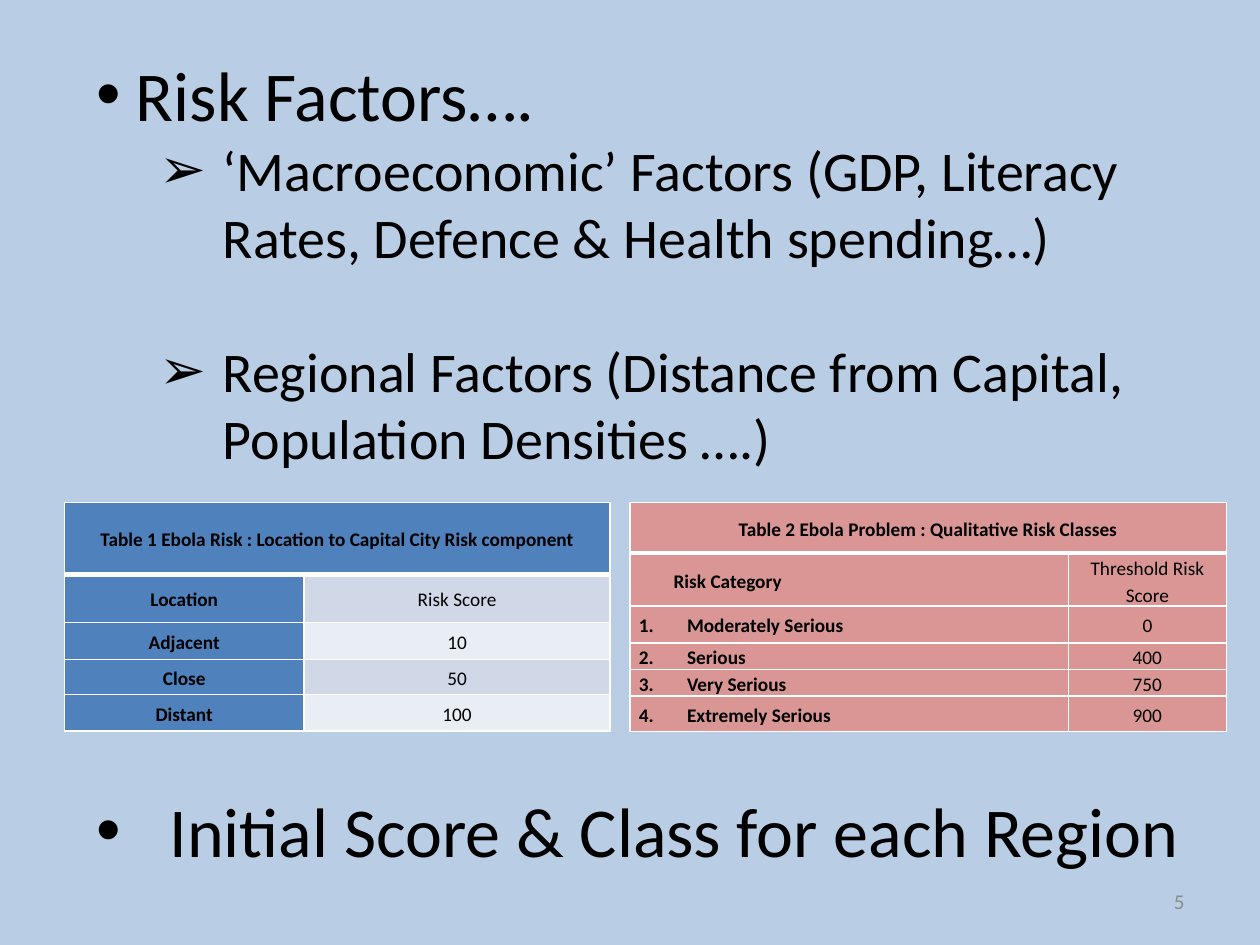
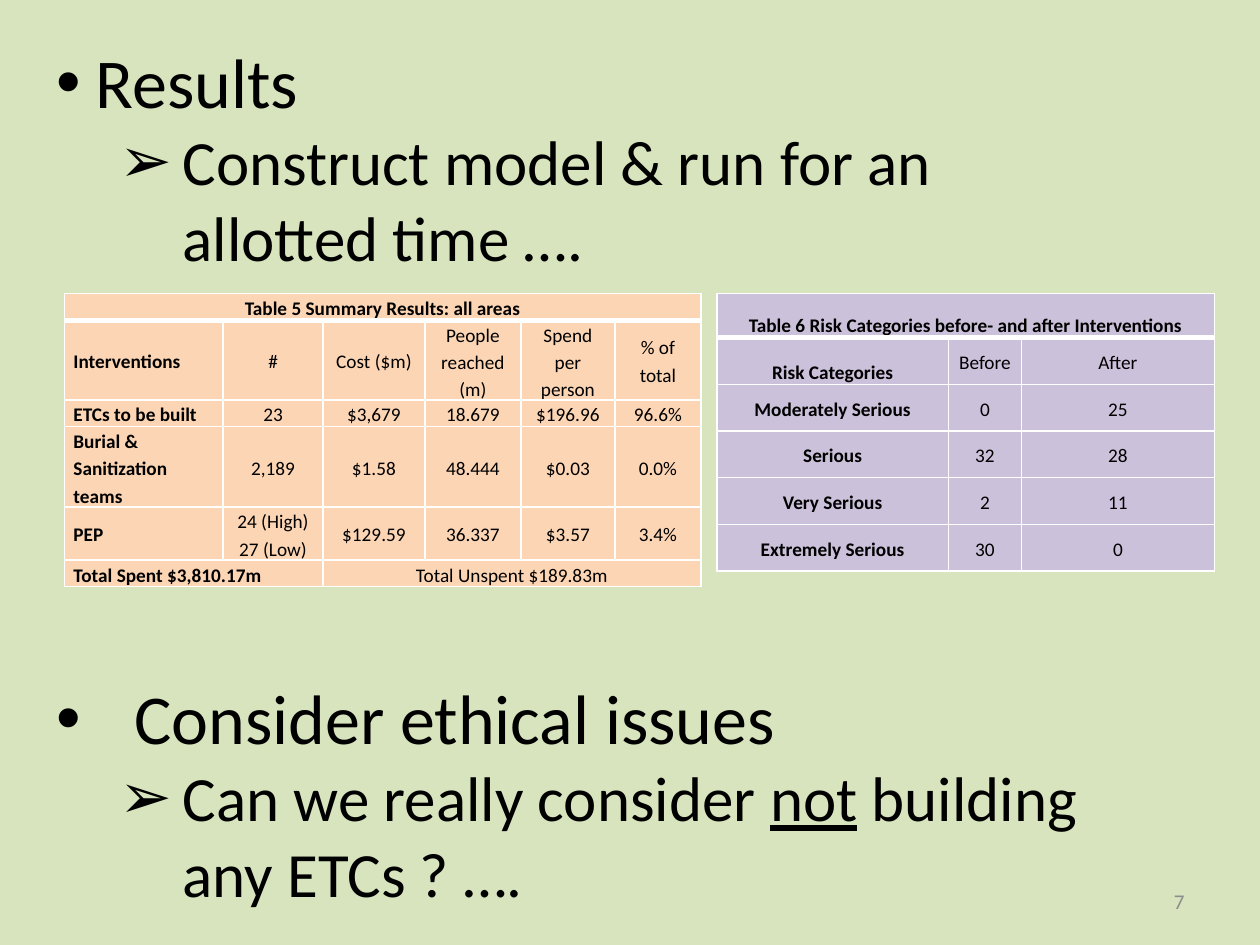
from itertools import cycle

from lxml import etree
from pptx import Presentation
from pptx.dml.color import RGBColor
from pptx.enum.text import MSO_ANCHOR, PP_ALIGN
from pptx.oxml.ns import qn
from pptx.util import Cm, Pt

LEFT, MID, RIGHT = PP_ALIGN.LEFT, PP_ALIGN.CENTER, PP_ALIGN.RIGHT
CENTER, BOTTOM = MSO_ANCHOR.MIDDLE, MSO_ANCHOR.BOTTOM

BLACK = RGBColor(0x00, 0x00, 0x00)
GREY = RGBColor(0x8C, 0x8C, 0x8C)
SKY = RGBColor(0xB9, 0xCD, 0xE5)
LIME = RGBColor(0xD7, 0xE4, 0xBD)
BLUE = RGBColor(0x4F, 0x81, 0xBD)
MIST = RGBColor(0xD0, 0xD8, 0xE8)
PALE = RGBColor(0xE9, 0xED, 0xF4)
ROSE = RGBColor(0xD9, 0x96, 0x94)
PEACH = RGBColor(0xFC, 0xD5, 0xB5)
LILAC = RGBColor(0xCC, 0xC1, 0xDA)

FONT = "Calibri"
DOT, ARROW = "•", "➢"


def write(par, text, size=11, color=BLACK, bold=False, line=False, align=None):
    run = par.add_run()
    run.text = text
    font = run.font
    font.name, font.size, font.bold = FONT, Pt(size), bold
    font.underline = line
    font.color.rgb = color
    if align is not None:
        par.alignment = align


def indent(par, left, hang=0):
    props = par._p.get_or_add_pPr()
    props.set("marL", str(Cm(left)))
    props.set("indent", str(-Cm(hang)))
    return props


def bullet(par, sign, left, hang):
    props = indent(par, left, hang)
    etree.SubElement(props, qn("a:buFont"), typeface="Arial")
    etree.SubElement(props, qn("a:buChar"), char=sign)


def number(par, start):
    props = indent(par, 0.97, 0.97)
    etree.SubElement(props, qn("a:buFont"), typeface=FONT)
    etree.SubElement(props, qn("a:buAutoNum"), type="arabicPeriod", startAt=str(start))


def border(cell, top, bottom):
    props = cell._tc.get_or_add_tcPr()
    sides = (("L", 1), ("R", 1), ("T", top), ("B", bottom))
    for place, (side, width) in enumerate(sides):
        edge = etree.Element(qn("a:ln" + side), w=str(Pt(width)))
        fill = etree.SubElement(edge, qn("a:solidFill"))
        etree.SubElement(fill, qn("a:srgbClr"), val="FFFFFF")
        props.insert(place, edge)


class Deck:
    def __init__(self):
        self.show = Presentation()
        self.show.slide_width, self.show.slide_height = Cm(25.4), Cm(19.05)
        self.slide = None

    def page(self, color, label):
        self.slide = self.show.slides.add_slide(self.show.slide_layouts[6])
        fill = self.slide.background.fill
        fill.solid()
        fill.fore_color.rgb = color
        frame = self.box(18.21, 17.65, 5.92, 1.02)
        frame.vertical_anchor = CENTER
        write(frame.paragraphs[0], label, size=12, color=GREY, align=RIGHT)

    def box(self, left, top, width, height):
        shape = self.slide.shapes.add_textbox(Cm(left), Cm(top), Cm(width), Cm(height))
        shape.text_frame.word_wrap = True
        return shape.text_frame

    def points(self, place, items):
        frame = self.box(*place)
        for row, (sign, left, hang, size, gap, parts) in enumerate(items):
            par = frame.add_paragraph() if row else frame.paragraphs[0]
            par.level = 1 if row else 0
            par.space_before = Pt(gap)
            bullet(par, sign, left, hang)
            for turn, part in enumerate(parts):
                write(par, part, size=size, line=turn % 2 == 1)

    def table(self, left, top, cols, highs, title, rows, head, fills, first=MID):
        shape = self.slide.shapes.add_table(
            len(highs), len(cols), Cm(left), Cm(top), Cm(sum(cols)), Cm(sum(highs)))
        grid = shape.table
        grid.first_row = grid.horz_banding = False
        for col, width in zip(grid.columns, cols):
            col.width = Cm(width)
        for row, high in zip(grid.rows, highs):
            row.height = Cm(high)
        lines = [[title] + [None] * (len(cols) - 1)] + rows
        shades = cycle(fills)
        for r, line in enumerate(lines):
            shade = next(shades) if r else head
            for c, text in enumerate(line):
                cell = grid.cell(r, c)
                cell.fill.solid()
                cell.fill.fore_color.rgb = shade if c else head
                cell.margin_left = cell.margin_right = Cm(0.18)
                cell.margin_top = cell.margin_bottom = 0
                cell.vertical_anchor = CENTER
                border(cell, 3 if r == 1 else 1, 1 if r else 3)
                if text is None:
                    continue
                par = cell.text_frame.paragraphs[0]
                par.line_spacing = 1.15
                write(par, text, bold=c == 0, align=first if r and c == 0 else MID)
                end = c + 1
                while end < len(line) and line[end] is None:
                    end += 1
                if end > c + 1:
                    cell.merge(grid.cell(r, end - 1))
        return grid


def risks(deck):
    deck.page(SKY, "5")
    deck.points((1.7, 0.91, 23.01, 17.02), [
        (DOT, 0.79, 0.79, 40, 0, ["Risk Factors…."]),
        (ARROW, 2.54, 1.27, 32, 0,
         ["‘Macroeconomic’ Factors (GDP, Literacy Rates, Defence & Health spending…)"]),
        (ARROW, 2.54, 1.27, 32, 38,
         ["Regional Factors (Distance from Capital, Population Densities ….)"]),
        (DOT, 1.47, 1.47, 40, 181, ["Initial Score & Class for each Region"]),
    ])
    deck.table(
        1.3, 10.13, [4.83, 6.17], [1.45, 0.97, 0.74, 0.71, 0.74],
        "Table 1 Ebola Risk : Location to Capital City Risk component",
        [["Location", "Risk Score"], ["Adjacent", "10"], ["Close", "50"],
         ["Distant", "100"]],
        BLUE, [MIST, PALE])
    grid = deck.table(
        12.7, 10.13, [8.84, 3.18], [1.02, 1.02, 0.74, 0.51, 0.51, 0.71],
        "Table 2 Ebola Problem : Qualitative Risk Classes",
        [["Risk Category", "Threshold Risk Score"], ["Moderately Serious", "0"],
         ["Serious", "400"], ["Very Serious", "750"], ["Extremely Serious", "900"]],
        ROSE, [ROSE], first=LEFT)
    indent(grid.cell(1, 0).text_frame.paragraphs[0], 0.7)
    for rank in range(1, 5):
        number(grid.cell(rank + 1, 0).text_frame.paragraphs[0], rank)


def results(deck):
    deck.page(LIME, "7")
    deck.points((0.89, 0.66, 22, 18.03), [
        (DOT, 0.79, 0.79, 40, 0, ["Results"]),
        (ARROW, 2.54, 1.27, 36, 0, ["Construct model & run for an allotted time …."]),
        (DOT, 1.57, 1.57, 40, 229, ["Consider ethical issues"]),
        (ARROW, 2.54, 1.27, 36, 0,
         ["Can we really consider ", "not", " building any ETCs ? …."]),
    ])
    spend = deck.table(
        1.3, 5.92, [3.2, 2.01, 2.06, 1.93, 1.9, 1.73],
        [0.51, 1.57, 0.51, 1.62, 1.07, 0.51],
        "Table 5 Summary Results: all areas",
        [["Interventions", "#", "Cost ($m)", "People reached (m)", "Spend per person",
          "% of total"],
         ["ETCs to be built", "23", "$3,679", "18.679", "$196.96", "96.6%"],
         ["Burial & Sanitization teams", "2,189", "$1.58", "48.444", "$0.03", "0.0%"],
         ["PEP", "24 (High) 27 (Low)", "$129.59", "36.337", "$3.57", "3.4%"],
         ["Total Spent $3,810.17m", None, "Total Unspent $189.83m", None, None, None]],
        PEACH, [PEACH], first=LEFT)
    change = deck.table(
        14.45, 5.92, [4.67, 1.47, 3.89], [0.89] + [0.94] * 5,
        "Table 6 Risk Categories before- and after Interventions",
        [["Risk Categories", "Before", "After"], ["Moderately Serious", "0", "25"],
         ["Serious", "32", "28"], ["Very Serious", "2", "11"],
         ["Extremely Serious", "30", "0"]],
        LILAC, [LILAC])
    for cell in (spend.cell(0, 0), change.cell(0, 0), change.cell(1, 0)):
        cell.vertical_anchor = BOTTOM


def main():
    deck = Deck()
    risks(deck)
    results(deck)
    deck.show.save("out.pptx")


if __name__ == "__main__":
    main()
